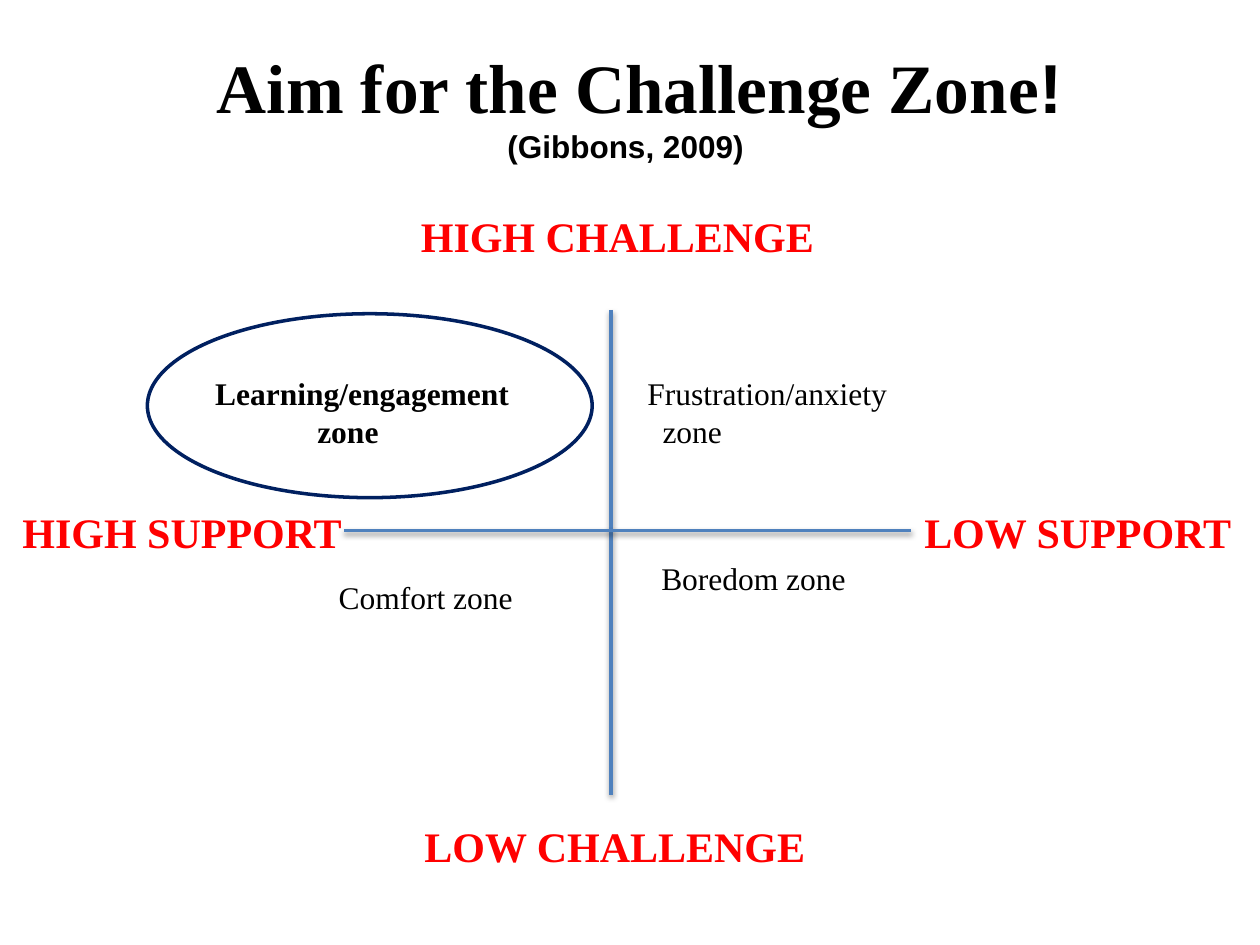
from dataclasses import dataclass

from lxml.etree import SubElement
from pptx import Presentation
from pptx.dml.color import RGBColor as Color
from pptx.enum.shapes import MSO_CONNECTOR as Connector, MSO_SHAPE as Shape
from pptx.enum.text import MSO_ANCHOR as Anchor, MSO_AUTO_SIZE as AutoSize, PP_ALIGN as Align
from pptx.oxml import parse_xml
from pptx.oxml.ns import nsdecls, qn
from pptx.util import Inches, Pt


@dataclass(frozen=True)
class Theme:
    """Colours, fonts and type sizes of the slide."""
    black: Color = Color.from_string("000000")
    red: Color = Color.from_string("FF0000")
    axis: Color = Color.from_string("4F81BD")
    ring: Color = Color.from_string("002060")
    serif: str = "Times New Roman"
    sans: str = "Arial"
    title: float = 39.6
    label: float = 24
    zone: float = 18
    line: float = 2


THEME = Theme()


def style_run(run, size, color, font=THEME.serif, bold=True):
    """Set the font of one run."""
    run.font.name = font
    run.font.size = Pt(size)
    run.font.bold = bold
    run.font.color.rgb = color


def place(shape, left, top, width, height):
    """Move and size a shape, in inches."""
    shape.left, shape.top = Inches(left), Inches(top)
    shape.width, shape.height = Inches(width), Inches(height)


def indent(paragraph, inches):
    """Indent a whole paragraph from the left."""
    properties = paragraph._p.get_or_add_pPr()
    properties.set("marL", str(Inches(inches)))
    properties.set("indent", "0")
    return properties


def fill_title(title):
    """Write the title and its citation."""
    place(title, 0.5, 0.3, 9, 1.06)
    title.text_frame.auto_size = AutoSize.NONE
    title.text_frame.vertical_anchor = Anchor.MIDDLE
    paragraph = title.text_frame.paragraphs[0]
    paragraph.alignment = Align.CENTER
    parts = [
        (" ", THEME.title, THEME.sans),
        ("Aim for the Challenge Zone", THEME.title, THEME.serif),
        ("!", THEME.title, THEME.sans),
        ("(Gibbons, 2009) ", THEME.zone, THEME.sans),
    ]
    for text, size, font in parts:
        if text.startswith("("):
            paragraph.add_line_break()
        run = paragraph.add_run()
        run.text = text
        style_run(run, size, THEME.black, font)


def fill_top_label(body):
    """Write the label above the vertical axis."""
    place(body, 0.5, 1.62, 9, 0.57)
    body.text_frame.auto_size = AutoSize.NONE
    body.text_frame.text = "HIGH CHALLENGE"
    paragraph = body.text_frame.paragraphs[0]
    paragraph.space_before = Pt(5)
    SubElement(indent(paragraph, 2.74), qn("a:buNone"))
    style_run(paragraph.runs[0], THEME.label, THEME.red)


def add_text(slide, box, lines, size, color, bold, before=0, align=Align.LEFT):
    """Add a text box from (text, indent) lines."""
    shape = slide.shapes.add_textbox(*map(Inches, box))
    frame = shape.text_frame
    frame.word_wrap = True
    frame.text = "\n".join(text for text, _ in lines)
    frame.paragraphs[0].space_before = Pt(before)
    for paragraph, (_, inches) in zip(frame.paragraphs, lines):
        paragraph.alignment = align
        indent(paragraph, inches)
        style_run(paragraph.runs[0], size, color, bold=bold)


def add_axis(slide, *ends):
    """Add an axis line with a soft shadow below it."""
    axis = slide.shapes.add_connector(Connector.STRAIGHT, *map(Inches, ends))
    axis.line.color.rgb = THEME.axis
    axis.line.width = Pt(THEME.line)
    axis._element.spPr.append(parse_xml(
        f'<a:effectLst {nsdecls("a")}><a:outerShdw blurRad="{Pt(3.1)}" dist="{Pt(1.6)}" '
        'dir="5400000" rotWithShape="0"><a:srgbClr val="000000"><a:alpha val="38000"/>'
        '</a:srgbClr></a:outerShdw></a:effectLst>'))


def add_ring(slide, *box):
    """Add the outlined ellipse around the target zone."""
    ring = slide.shapes.add_shape(Shape.OVAL, *map(Inches, box))
    ring.shadow.inherit = False
    ring.fill.background()
    ring.line.color.rgb = THEME.ring
    ring.line.width = Pt(THEME.line)


def main():
    """Build and save the slide."""
    presentation = Presentation()
    presentation.slide_width, presentation.slide_height = Inches(10), Inches(7.5)
    slide = presentation.slides.add_slide(presentation.slide_layouts[1])
    fill_title(slide.shapes.title)
    fill_top_label(slide.placeholders[1])
    add_axis(slide, 4.85, 2.46, 4.85, 6.31)
    add_axis(slide, 7.23, 4.21, 2.73, 4.21)

    labels = [
        ("LOW CHALLENGE", (3.27, 6.46, 4.12, 0.5), 0, Align.LEFT),
        ("HIGH SUPPORT", (0.08, 3.97, 3.15, 0.5), 0, Align.LEFT),
        ("LOW SUPPORT", (6.63, 3.97, 3.24, 0.57), 4, Align.RIGHT),
    ]
    for text, box, before, align in labels:
        add_text(slide, box, [(text, 0)], THEME.label, THEME.red, True, before, align)

    zones = [
        ((1.36, 2.92, 3.05, 0.94), [("Learning/engagement", 0.25), ("zone", 1.06)], True, 0),
        ((4.85, 2.92, 3.05, 0.71), [("Frustration/anxiety", 0.19), ("zone", 0.31)], False, 0),
        ((1.97, 4.54, 2.23, 0.4), [("Comfort zone", 0.62)], False, 0),
        ((5.15, 4.39, 2.54, 0.71), [("Boredom zone", 0)], False, 21),
    ]
    for box, lines, bold, before in zones:
        add_text(slide, box, lines, THEME.zone, THEME.black, bold, before)
    add_ring(slide, 1.17, 2.49, 3.53, 1.46)
    presentation.save("out.pptx")


if __name__ == "__main__":
    main()
